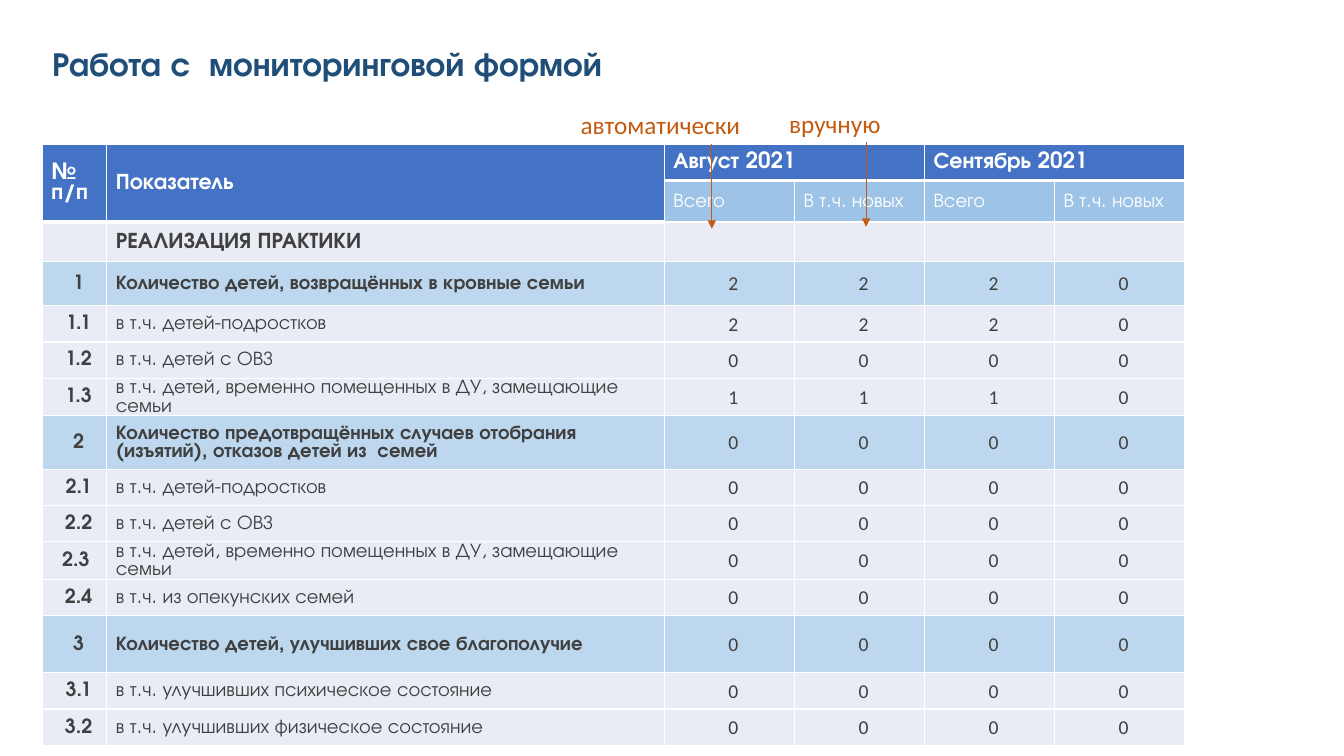
from lxml.etree import SubElement
from pptx import Presentation
from pptx.dml.color import RGBColor
from pptx.enum.shapes import MSO_CONNECTOR
from pptx.enum.text import MSO_ANCHOR, PP_ALIGN
from pptx.oxml.ns import qn
from pptx.util import Inches, Pt

WHITE = RGBColor(0xFF, 0xFF, 0xFF)
NAVY = RGBColor(0x1F, 0x4E, 0x79)
ORANGE = RGBColor(0xC5, 0x5A, 0x11)
GREY = RGBColor(0x40, 0x40, 0x40)
HEAD = RGBColor(0x44, 0x72, 0xC4)
SUBHEAD = RGBColor(0x9D, 0xC3, 0xE6)
GROUP = RGBColor(0xBD, 0xD7, 0xEE)
PLAIN = RGBColor(0xE9, 0xEB, 0xF5)

ADVENTOR = "TeX Gyre Adventor"
CALIBRI = "Calibri"

COL_WIDTHS = [0.64, 5.53] + [1.29] * 4
ROW_HEIGHTS = [0.36, 0.41, 0.39, 0.44, 0.36, 0.36, 0.36, 0.53,
               0.36, 0.36, 0.36, 0.36, 0.57, 0.36, 0.36]
NUMBER = "№ п/п"
TEENS = "в т.ч. детей-подростков"
DISABLED = "в т.ч. детей с ОВЗ"
PLACED = "в т.ч. детей, временно помещенных в ДУ, замещающие семьи"
TIGHT_LINES = {NUMBER: Pt(14.5), PLACED: Pt(13)}
ZEROS = [0, 0, 0, 0]
ROWS = [
    [NUMBER, "Показатель", "Август 2021", "", "Сентябрь 2021", ""],
    ["", ""] + ["Всего", "В т.ч. новых"] * 2,
    ["", "РЕАЛИЗАЦИЯ ПРАКТИКИ", "", "", "", ""],
    ["1", "Количество детей, возвращённых в кровные семьи", 2, 2, 2, 0],
    ["1.1", TEENS, 2, 2, 2, 0],
    ["1.2", DISABLED, *ZEROS],
    ["1.3", PLACED, 1, 1, 1, 0],
    ["2", "Количество предотвращённых случаев отобрания (изъятий), "
          "отказов детей из  семей", *ZEROS],
    ["2.1", TEENS, *ZEROS],
    ["2.2", DISABLED, *ZEROS],
    ["2.3 ", PLACED, *ZEROS],
    ["2.4", "в т.ч. из опекунских семей", *ZEROS],
    ["3", "Количество детей, улучшивших свое благополучие", *ZEROS],
    ["3.1", "в т.ч. улучшивших психическое состояние", *ZEROS],
    ["3.2", "в т.ч. улучшивших физическое состояние", *ZEROS],
]
MERGES = [(0, 0, 1, 0), (0, 1, 1, 1), (0, 2, 0, 3), (0, 4, 0, 5)]


def set_font(font, color, **format_values):
    font.color.rgb = color
    for name, value in format_values.items():
        setattr(font, name, value)


def add_label(s, box, text, color, align=PP_ALIGN.CENTER, spacing=None, **font):
    tf = s.shapes.add_textbox(*map(Inches, box)).text_frame
    tf.word_wrap = True
    tf.vertical_anchor = MSO_ANCHOR.MIDDLE
    p = tf.paragraphs[0]
    p.alignment = align
    p.line_spacing = spacing
    r = p.add_run()
    r.text = text
    set_font(r.font, color, **font)


def set_borders(cell, top, bottom):
    tcPr = cell._tc.get_or_add_tcPr()
    for side, width in {"L": 1, "R": 1, "T": top, "B": bottom}.items():
        ln = SubElement(tcPr, qn(f"a:ln{side}"), w=str(Pt(width)))
        fill = SubElement(ln, qn("a:solidFill"))
        SubElement(fill, qn("a:srgbClr"), val=str(WHITE))


def row_style(row, col):
    """Return the fill, text colour, size and boldness of a cell."""
    if row == 0 or row == 1 and col < 2:
        return HEAD, WHITE, 16, True
    if row == 1:
        return SUBHEAD, WHITE, 14, False
    if row == 2:
        return PLAIN, GREY, 16, True
    is_group = "." not in ROWS[row][0]
    bold = col == 0 or col == 1 and is_group
    return GROUP if is_group else PLAIN, GREY, 14, bold


def format_cell(cell, row, col):
    fill, color, size, bold = row_style(row, col)
    set_borders(cell, top=3 if row == 1 and col > 1 else 1,
                bottom=3 if row == 0 or row == 1 and col < 2 else 1)
    cell.fill.solid()
    cell.fill.fore_color.rgb = fill
    cell.vertical_anchor = MSO_ANCHOR.MIDDLE
    cell.margin_left = cell.margin_right = cell.margin_top = Inches(0.01)
    cell.margin_bottom = 0
    p = cell.text_frame.paragraphs[0]
    p._p.get_or_add_pPr().set("marL", str(Inches(0.08)))
    is_body = row > 2
    if is_body and col != 1:
        p.alignment = PP_ALIGN.CENTER
    text = str(ROWS[row][col])
    p.line_spacing = TIGHT_LINES.get(text)
    if text:
        r = p.add_run()
        r.text = text
        set_font(r.font, color, size=Pt(size), bold=bold,
                 name=CALIBRI if is_body and col > 1 else ADVENTOR)


def add_monitoring_table(s, left, top):
    box = (left, top, sum(COL_WIDTHS), sum(ROW_HEIGHTS))
    table = s.shapes.add_table(len(ROWS), len(COL_WIDTHS),
                               *map(Inches, box)).table
    table.first_row = table.horz_banding = False
    for column, width in zip(table.columns, COL_WIDTHS):
        column.width = Inches(width)
    for row, height in enumerate(ROW_HEIGHTS):
        table.rows[row].height = Inches(height)
        for col in range(len(COL_WIDTHS)):
            format_cell(table.cell(row, col), row, col)
    for row, col, last_row, last_col in MERGES:
        table.cell(row, col).merge(table.cell(last_row, last_col))


def add_down_arrow(s, x, top, length):
    arrow = s.shapes.add_connector(
        MSO_CONNECTOR.STRAIGHT, *map(Inches, (x, top, x, top + length)))
    arrow.line.color.rgb = ORANGE
    arrow.line.width = Pt(0.5)
    SubElement(arrow.line._get_or_add_ln(), qn("a:tailEnd"), type="triangle")
    SubElement(arrow._element.spPr, qn("a:effectLst"))


def add_fill_note(s, box, text, arrow_x):
    """Add a caption above the table with an arrow down into a column."""
    left, top, width, height = box
    add_label(s, box, text, ORANGE, size=Pt(18), name=CALIBRI)
    add_down_arrow(s, arrow_x, top + height, 0.84)


def build_slide(prs):
    s = prs.slides.add_slide(prs.slide_layouts[6])
    add_label(s, (0.42, 0.4, 8.27, 0.51), "Работа с  мониторинговой формой",
              NAVY, PP_ALIGN.LEFT, 0.9, size=Pt(24), name=ADVENTOR, bold=True)
    add_monitoring_table(s, 0.42, 1.43)
    add_fill_note(s, (5.53, 1.03, 2.04, 0.4), "автоматически", 7.06)
    add_fill_note(s, (7.57, 1.03, 1.42, 0.38), "вручную", 8.59)


def main():
    prs = Presentation()
    prs.slide_width = Inches(13.33)
    prs.slide_height = Inches(7.5)
    build_slide(prs)
    prs.save("out.pptx")


if __name__ == "__main__":
    main()
